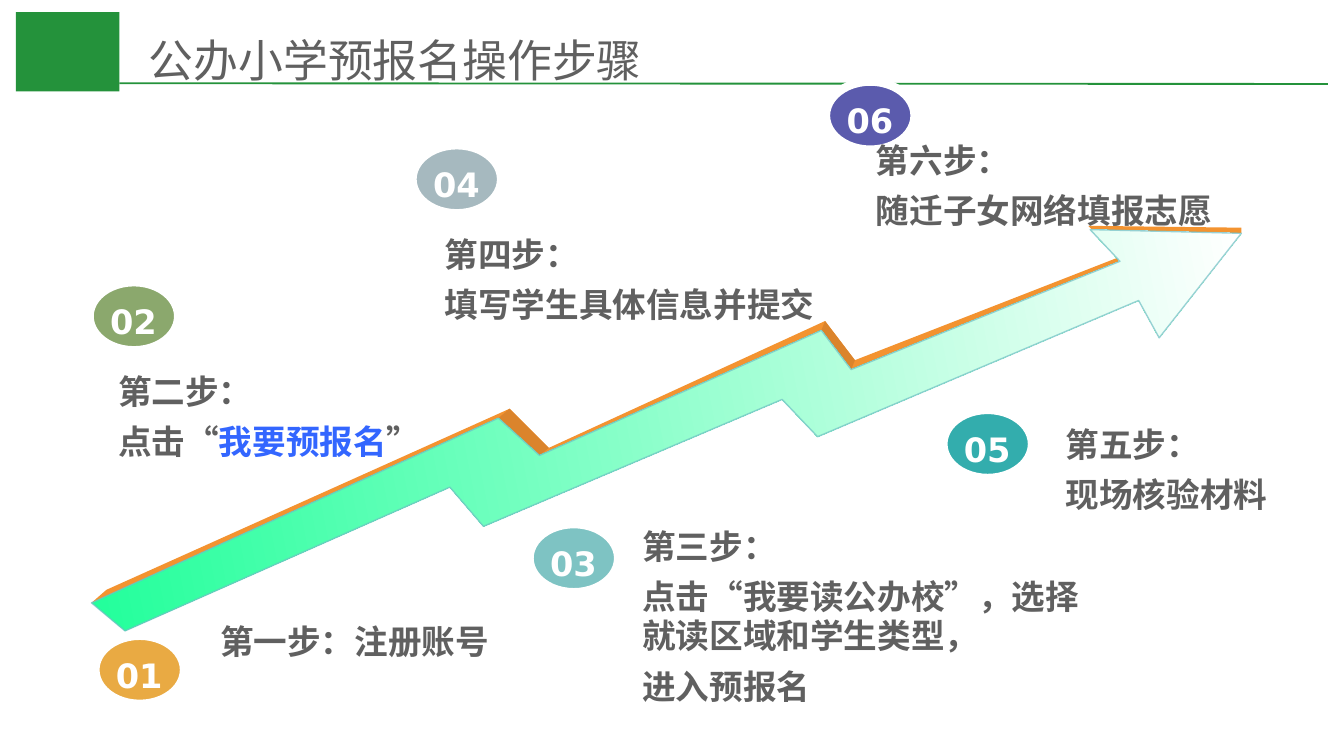
from dataclasses import dataclass

from lxml import etree
from pptx import Presentation
from pptx.dml.color import RGBColor
from pptx.enum.shapes import MSO_CONNECTOR, MSO_SHAPE
from pptx.enum.text import MSO_ANCHOR, PP_ALIGN
from pptx.oxml.ns import qn
from pptx.util import Pt


@dataclass(frozen=True)
class Theme:
    heading_font: str = "Noto Sans CJK SC"
    number_font: str = "DejaVu Sans"
    title_size: int = 24
    step_size: int = 18
    line_height: int = 21
    green: str = "24923B"
    text: str = "606060"
    highlight: str = "3366FF"
    white: str = "FFFFFF"
    arrow_start: str = "22FF9B"
    arrow_outline: str = "72BFC5"
    edge: str = "F39330"
    edge_shade: str = "DB842C"


THEME = Theme()

# Content: number, badge colour, badge corner, text box, paragraphs
TITLE = "公办小学预报名操作步骤"
HIGHLIGHT = "我要预报名"
STEPS = [
    ("01", "E49514", (51.1, 340.6), (110.9, 329.8, 161.3, 28.8),
     ["第一步：注册账号"]),
    ("02", "6E9349", (48, 151.2), (56.2, 195.8, 178.6, 56.9),
     ["第二步：", "点击“我要预报名”"]),
    ("03", "5EB4B4", (283.7, 280.8), (337, 278.6, 255.6, 106.6),
     ["第三步：", "点击“我要读公办校”，选择就读区域和学生类型，", "进入预报名"]),
    ("04", "90A8B0", (221, 77.8), (231.1, 122.4, 214.6, 56.9),
     ["第四步：", "填写学生具体信息并提交"]),
    ("06", "333399", (442.5, 43.7), (462.2, 72, 197.3, 56.9),
     ["第六步：", "随迁子女网络填报志愿"]),
    ("05", "009999", (505.4, 219.6), (563.8, 223.9, 124.6, 56.9),
     ["第五步：", "现场核验材料"]),
]
BADGE_SIZE = (47.5, 36.5)
NUMBER_OFFSET = (2.6, 6.5)
NUMBER_SIZE = (41.8, 28.8)

# Rising arrow: raised edge, its two shaded steps, and the face
EDGE = [(49.3, 323), (57, 316), (273, 218.6), (294, 239.5), (442.5, 172.5),
        (458, 193), (599, 138), (583, 121), (665.4, 121.6), (665.4, 125.4),
        (610, 150), (456, 205), (440, 190), (289, 250), (267, 235)]
EDGE_STEPS = [
    [(273, 218.6), (294, 239.5), (288.8, 244.3), (266.8, 223.9)],
    [(442.5, 172.5), (458, 193), (455.9, 197.7), (439.8, 176.8)],
]
FACE = [(49.3, 323), (266.8, 223.9), (288.8, 244.3), (439.8, 176.8),
        (455.9, 197.7), (600.5, 140.4), (583.9, 123.2), (665.4, 125.4),
        (621.4, 181.1), (609.6, 160.7), (437.7, 233.6), (418.9, 214.3),
        (259.3, 281.8), (241.1, 261.4), (67, 337.5)]


def rgb(color):
    return RGBColor.from_string(color)


def set_opacity(color_format_parent, percent):
    for color in color_format_parent.iter(qn("a:srgbClr")):
        etree.SubElement(color, qn("a:alpha"), val=str(percent * 1000))


def fill_plain(shape, color):
    shape.shadow.inherit = False
    shape.fill.solid()
    shape.fill.fore_color.rgb = rgb(color)
    shape.line.fill.background()


def add_polygon(slide, points, color):
    builder = slide.shapes.build_freeform(*points[0], scale=Pt(1))
    builder.add_line_segments(points[1:], close=True)
    polygon = builder.convert_to_shape()
    fill_plain(polygon, color)
    return polygon


def add_text(slide, box, paragraphs, size, font, color, bold=True,
             align=PP_ALIGN.LEFT, anchor=MSO_ANCHOR.TOP, line_height=None):
    frame = slide.shapes.add_textbox(*map(Pt, box)).text_frame
    frame.word_wrap = True
    frame.vertical_anchor = anchor
    for index, text in enumerate(paragraphs):
        paragraph = frame.paragraphs[0] if index == 0 else frame.add_paragraph()
        paragraph.alignment = align
        if line_height:
            paragraph.line_spacing = Pt(line_height)
        if index < len(paragraphs) - 1:
            paragraph.space_after = Pt(6)
        paragraph.font.size = Pt(size)
        paragraph.font.bold = bold
        paragraph.font.color.rgb = rgb(color)
        paragraph.font.name = font
        defaults = paragraph._p.pPr.find(qn("a:defRPr"))
        etree.SubElement(defaults, qn("a:ea"), typeface=font)
        before, match, after = text.partition(HIGHLIGHT)
        for part in filter(None, (before, match, after)):
            run = paragraph.add_run()
            run.text = part
            if part == HIGHLIGHT:
                run.font.color.rgb = rgb(THEME.highlight)


def add_header(slide):
    block = slide.shapes.add_shape(
        MSO_SHAPE.RECTANGLE, *map(Pt, (8.6, 6.5, 55.4, 42.5)))
    fill_plain(block, THEME.green)
    rule = slide.shapes.add_connector(
        MSO_CONNECTOR.STRAIGHT, *map(Pt, (64, 44.6, 711.4, 45)))
    rule.line.color.rgb = rgb(THEME.green)
    rule.line.width = Pt(1)
    etree.SubElement(rule._element.spPr, qn("a:effectLst"))
    add_text(slide, (72.7, 22.6, 612, 27.4), [TITLE], THEME.title_size,
             THEME.heading_font, THEME.text, bold=False,
             anchor=MSO_ANCHOR.BOTTOM)


def add_arrow(slide):
    add_polygon(slide, EDGE, THEME.edge)
    for step in EDGE_STEPS:
        add_polygon(slide, step, THEME.edge_shade)
    face = add_polygon(slide, FACE, THEME.white)
    face.fill.gradient()
    face.fill.gradient_angle = 11.1
    for stop, position, color in zip(face.fill.gradient_stops, (0, 1),
                                     (THEME.arrow_start, THEME.white)):
        stop.position = position
        stop.color.rgb = rgb(color)
    face.line.color.rgb = rgb(THEME.arrow_outline)
    face.line.width = Pt(0.75)
    set_opacity(face.line._ln, 70)


def add_step(slide, number, color, corner, box, paragraphs):
    badge = slide.shapes.add_shape(
        MSO_SHAPE.OVAL, *map(Pt, corner + BADGE_SIZE))
    fill_plain(badge, color)
    set_opacity(badge._element.spPr, 80)
    badge.line.color.rgb = rgb(THEME.white)
    badge.line.width = Pt(4.5)
    number_corner = tuple(c + d for c, d in zip(corner, NUMBER_OFFSET))
    add_text(slide, number_corner + NUMBER_SIZE, [number], THEME.step_size,
             THEME.number_font, THEME.white, align=PP_ALIGN.CENTER)
    add_text(slide, box, paragraphs, THEME.step_size, THEME.heading_font,
             THEME.text, line_height=THEME.line_height)


def main():
    deck = Presentation()
    deck.slide_width, deck.slide_height = Pt(720), Pt(405)
    slide = deck.slides.add_slide(deck.slide_layouts[6])
    add_header(slide)
    add_arrow(slide)
    for step in STEPS:
        add_step(slide, *step)
    deck.save("out.pptx")


if __name__ == "__main__":
    main()
